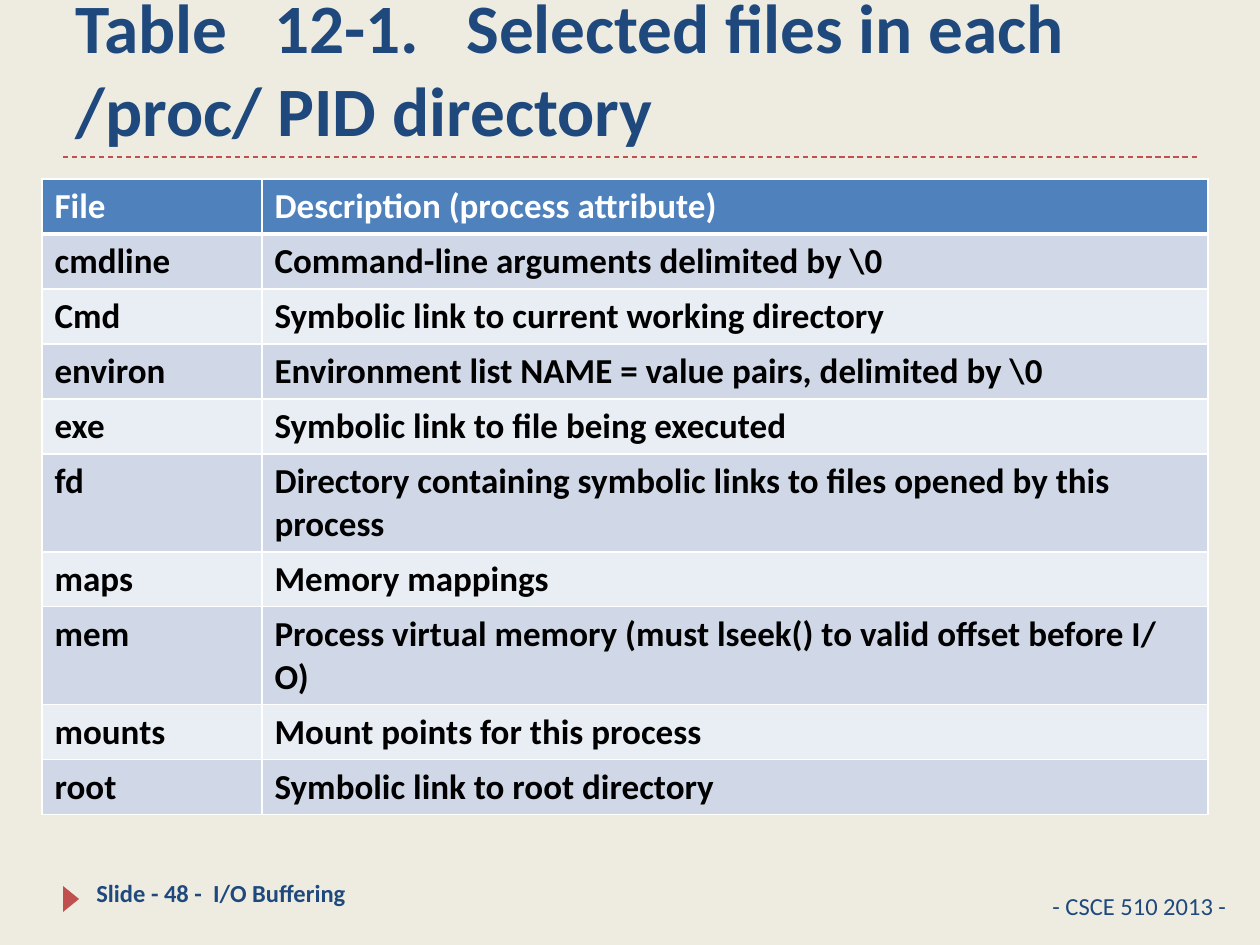
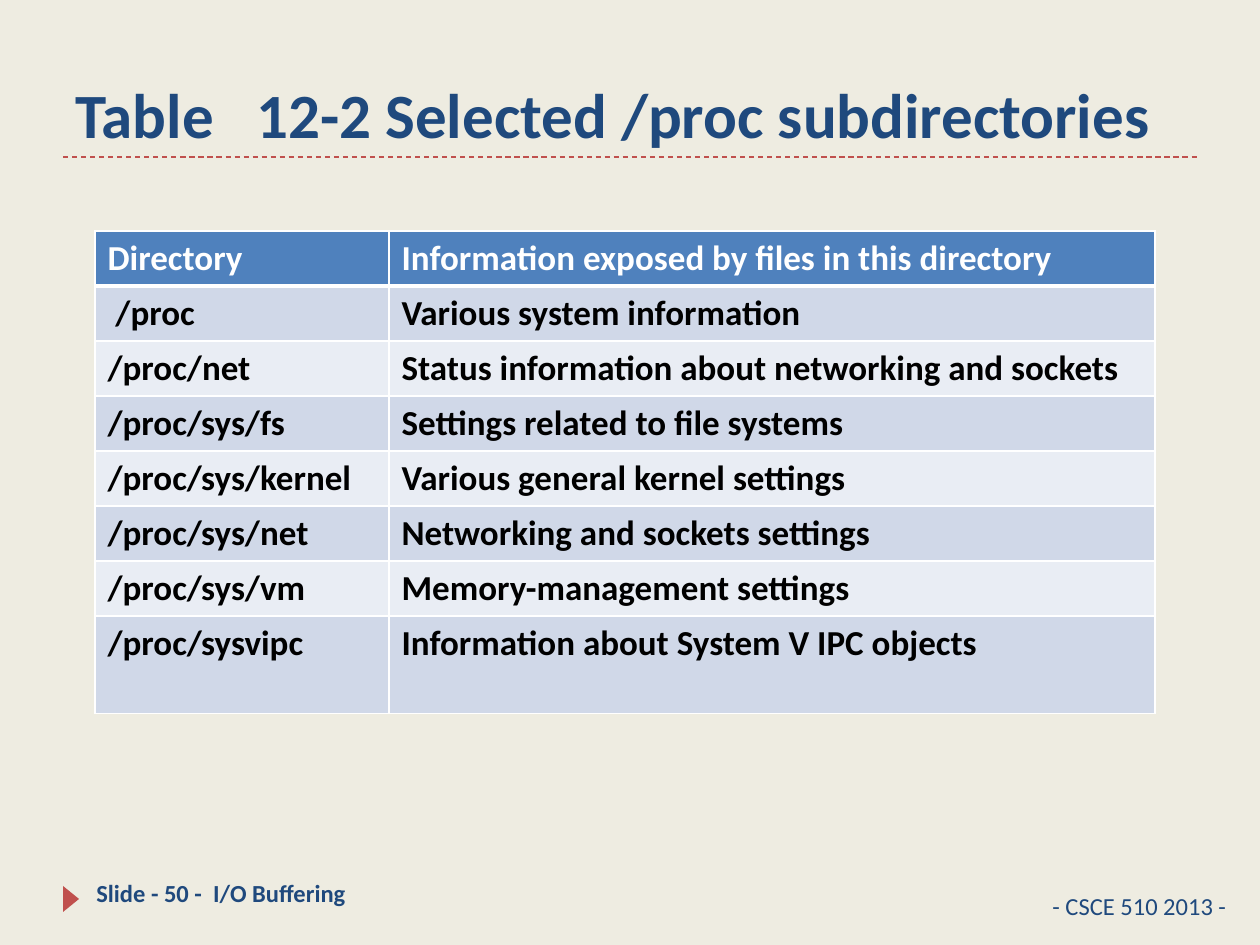
import pptx
import pptx.util
import pptx.dml.color
import pptx.enum.dml
import pptx.enum.shapes
import pptx.enum.text
import pptx.oxml
import pptx.oxml.ns

# Content
COURSE = "- CSCE 510 2013 -"
SLIDES = [
    {
        "number": 48,
        "title": "Table   12-1.   Selected files in each /proc/ PID directory",
        "title_size": 39.6,
        "table_at": (42, 179),
        "columns": (220, 946),
        "two_line_rows": (5, 7),
        "rows": [
            ("File", "Description (process attribute)"),
            ("cmdline", "Command-line arguments delimited by \\0"),
            ("Cmd", "Symbolic link to current working directory"),
            ("environ", "Environment list NAME = value pairs, delimited by \\0"),
            ("exe", "Symbolic link to file being executed"),
            ("fd", "Directory containing symbolic links to files opened by this process"),
            ("maps", "Memory mappings"),
            ("mem", "Process virtual memory (must lseek() to valid offset before I/ O)"),
            ("mounts", "Mount points for this process"),
            ("root", "Symbolic link to root directory"),
        ],
    },
    {
        "number": 50,
        "title": "Table   12-2 Selected /proc subdirectories",
        "title_size": 36,
        "table_at": (95, 231),
        "columns": (294, 766),
        "two_line_rows": (7,),
        "rows": [
            ("Directory", "Information exposed by files in this directory"),
            (" /proc", "Various system information"),
            ("/proc/net", "Status information about networking and sockets"),
            ("/proc/sys/fs", "Settings related to file systems"),
            ("/proc/sys/kernel", "Various general kernel settings"),
            ("/proc/sys/net", "Networking and sockets settings"),
            ("/proc/sys/vm", "Memory-management settings"),
            ("/proc/sysvipc", "Information about System V IPC objects"),
        ],
    },
]

# Shared look
COLORS = {
    "background": "EEECE1", "heading": "1F497D", "accent": "C0504D",
    "header": "4F81BD", "odd_row": "D0D8E8", "even_row": "E9EDF4",
    "white": "FFFFFF", "black": "000000",
}
FONT = "Calibri"
ROW_HEIGHT, TWO_LINE_HEIGHT = 55, 98


def px(length):
    return pptx.util.Emu(round(length * 914400 / 126))


def color(name):
    return pptx.dml.color.RGBColor.from_string(COLORS[name])


def style_text(frame, size, color_name, bold):
    for run in frame.paragraphs[0].runs:
        run.font.name = FONT
        run.font.size = pptx.util.Pt(size)
        run.font.bold = bold
        run.font.color.rgb = color(color_name)


def add_text(slide, text, box, size, bold=True, anchor="TOP"):
    frame = slide.shapes.add_textbox(*map(px, box)).text_frame
    frame.word_wrap = True
    frame.vertical_anchor = pptx.enum.text.MSO_ANCHOR[anchor]
    frame.text = text
    style_text(frame, size, "heading", bold)


def add_frame(slide, content):
    slide.background.fill.solid()
    slide.background.fill.fore_color.rgb = color("background")

    # Dashed rule under the title
    rule = slide.shapes.add_connector(
        pptx.enum.shapes.MSO_CONNECTOR.STRAIGHT, px(63), px(157), px(1197), px(157))
    rule.line.color.rgb = color("accent")
    rule.line.width = pptx.util.Pt(0.75)
    rule.line.dash_style = pptx.enum.dml.MSO_LINE.DASH
    properties = rule._element.spPr
    properties.append(properties.makeelement(pptx.oxml.ns.qn("a:effectLst"), {}))

    # Footer arrow
    arrow = slide.shapes.add_shape(
        pptx.enum.shapes.MSO_SHAPE.ISOSCELES_TRIANGLE, px(58), px(891), px(26), px(16))
    arrow.rotation = 90
    arrow.shadow.inherit = False
    arrow.fill.solid()
    arrow.fill.fore_color.rgb = color("accent")
    arrow.line.fill.background()

    # Title and footers
    add_text(slide, content["title"], (63, 21, 1134, 136), content["title_size"], anchor="BOTTOM")
    add_text(slide, COURSE, (1040, 885, 210, 50), 14, bold=False)
    add_text(slide, f"Slide - {content['number']} -  I/O Buffering", (84, 872, 304, 50), 14)


def add_border(cell, side, points):
    cell._tc.get_or_add_tcPr().append(pptx.oxml.parse_xml(
        f'<a:{side} {pptx.oxml.ns.nsdecls("a")} w="{pptx.util.Pt(points)}"><a:solidFill>'
        f'<a:srgbClr val="{COLORS["white"]}"/></a:solidFill></a:{side}>'))


def add_file_table(slide, content):
    rows, columns = content["rows"], content["columns"]
    heights = [TWO_LINE_HEIGHT if index in content["two_line_rows"] else ROW_HEIGHT
               for index in range(len(rows))]
    box = (*content["table_at"], sum(columns), sum(heights))
    table = slide.shapes.add_table(len(rows), len(columns), *map(px, box)).table
    for index, width in enumerate(columns):
        table.columns[index].width = px(width)

    for row, (texts, height) in enumerate(zip(rows, heights)):
        table.rows[row].height = px(height)
        fill = "header" if row == 0 else "odd_row" if row % 2 else "even_row"
        for column, text in enumerate(texts):
            cell = table.cell(row, column)
            cell.text_frame.text = text
            style_text(cell.text_frame, 20, "black" if row else "white", True)
            # The line below the header is heavier
            borders = {"lnL": 1, "lnR": 1, "lnT": 3 if row == 1 else 1, "lnB": 1 if row else 3}
            for side, points in borders.items():
                add_border(cell, side, points)
            cell.fill.solid()
            cell.fill.fore_color.rgb = color(fill)


def main():
    deck = pptx.Presentation()
    deck.slide_width, deck.slide_height = px(1260), px(945)
    for content in SLIDES:
        slide = deck.slides.add_slide(deck.slide_layouts[6])
        add_frame(slide, content)
        add_file_table(slide, content)
    deck.save("out.pptx")


if __name__ == "__main__":
    main()
